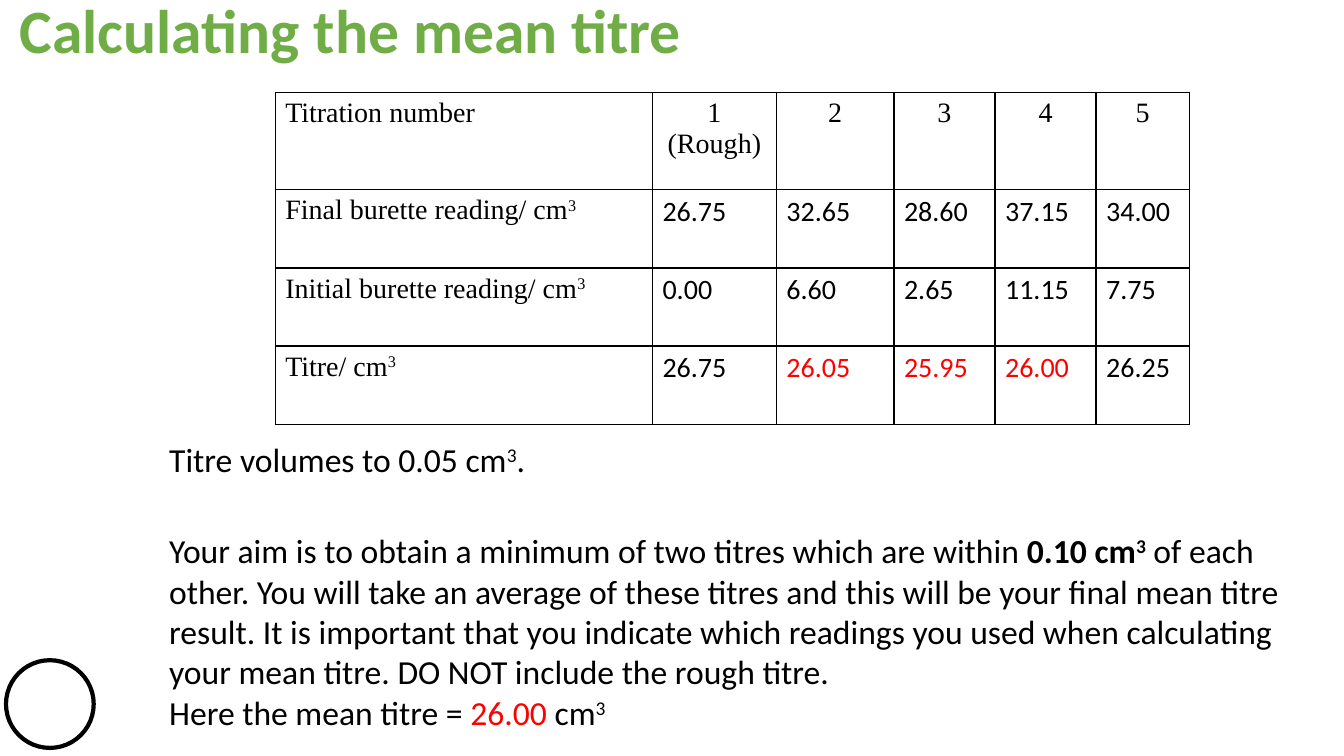
from dataclasses import dataclass
from typing import Any

from lxml.etree import SubElement
from pptx import Presentation
from pptx.dml.color import RGBColor
from pptx.enum.shapes import MSO_SHAPE
from pptx.enum.text import MSO_ANCHOR, PP_ALIGN
from pptx.oxml.ns import qn
from pptx.util import Pt


@dataclass(frozen=True)
class Theme:
    black: RGBColor = RGBColor(0x00, 0x00, 0x00)
    white: RGBColor = RGBColor(0xFF, 0xFF, 0xFF)
    red: RGBColor = RGBColor(0xFF, 0x00, 0x00)
    green: RGBColor = RGBColor(0x70, 0xAD, 0x47)
    sans: str = "Calibri"
    serif: str = "Times New Roman"
    title: float = 44
    body: float = 24
    table: float = 20


THEME = Theme()


@dataclass(frozen=True)
class Span:
    text: str
    color: RGBColor = THEME.black
    bold: bool = False
    raised: bool = False


@dataclass(frozen=True)
class TextBlock:
    box: tuple[float, float, float, float]
    paragraphs: list[list[Span]]
    size: float = THEME.body
    anchor: MSO_ANCHOR = MSO_ANCHOR.TOP
    spacing: float = 1.0


CUBED = Span("3", raised=True)

# Text blocks, from back to front
TEXT_BLOCKS = [
    TextBlock((113.76, 374.4, 819.36, 152.64), [
        [Span("Your aim is to obtain a minimum of two titres which are within "),
         Span("0.10 cm", bold=True), Span("3", bold=True, raised=True),
         Span(" of each other. You will take an average of these titres and this "
              "will be your final mean titre result. It is important that you "
              "indicate which readings you used when calculating your mean titre. "
              "DO NOT include the rough titre.")],
        [Span("Here the mean titre = "), Span("26.00", THEME.red), Span(" cm"), CUBED],
    ], anchor=MSO_ANCHOR.MIDDLE),
    TextBlock((113.76, 315.36, 646.56, 74.16),
              [[Span("Titre volumes to 0.05 cm"), CUBED, Span(".")]], spacing=0.8),
    TextBlock((7.2, -9.36, 648, 90),
              [[Span("Calculating the mean titre", THEME.green, bold=True)]],
              size=THEME.title),
]

# Titration table
TABLE_BOX = (196.56, 66.24, 653.04, 236.88)
COLUMN_WIDTHS = [269.5, 88.5, 84, 72.2, 72.2, 66.6]
ROW_HEIGHTS = [69.4, 55.8, 55.8, 55.8]
HEADINGS = ["Titration number", "1\n(Rough)", "2", "3", "4", "5"]
READINGS = {
    "Final burette reading/ cm": ["26.75", "32.65", "28.60", "37.15", "34.00"],
    "Initial burette reading/ cm": ["0.00", "6.60", "2.65", "11.15", "7.75"],
    "Titre/ cm": ["26.75", "26.05", "25.95", "26.00", "26.25"],
}
CONCORDANT = {"26.05", "25.95", "26.00"}


def write(frame: Any, paragraphs: list[list[Span]], size: float, face: str,
          align: PP_ALIGN = PP_ALIGN.LEFT, spacing: float = 1.0) -> None:
    for index, spans in enumerate(paragraphs):
        paragraph = frame.add_paragraph() if index else frame.paragraphs[0]
        paragraph.alignment = align
        paragraph.line_spacing = spacing
        for span in spans:
            run = paragraph.add_run()
            run.text = span.text
            font_values = {"size": Pt(size), "name": face, "bold": span.bold}
            for name, value in font_values.items():
                setattr(run.font, name, value)
            run.font.color.rgb = span.color
            if span.raised:
                run.font._element.set("baseline", "30000")


def add_text(slide: Any, block: TextBlock) -> None:
    frame = slide.shapes.add_textbox(*map(Pt, block.box)).text_frame
    frame_values = {"word_wrap": True, "vertical_anchor": block.anchor}
    for name, value in frame_values.items():
        setattr(frame, name, value)
    write(frame, block.paragraphs, block.size, THEME.sans, spacing=block.spacing)


def outline(cell: Any) -> None:
    properties = cell._tc.get_or_add_tcPr()
    for side in ("lnL", "lnR", "lnT", "lnB"):
        edge = SubElement(properties, qn(f"a:{side}"), w=str(Pt(1)))
        fill = SubElement(edge, qn("a:solidFill"))
        SubElement(fill, qn("a:srgbClr"), val=str(THEME.black))


def add_titrations(slide: Any) -> None:
    shape = slide.shapes.add_table(len(ROW_HEIGHTS), len(COLUMN_WIDTHS),
                                   *map(Pt, TABLE_BOX))
    titrations = shape.table
    for flag in ("first_row", "horz_banding"):
        setattr(titrations, flag, False)
    for column, width in zip(titrations.columns, COLUMN_WIDTHS):
        column.width = Pt(width)
    for row, height in zip(titrations.rows, ROW_HEIGHTS):
        row.height = Pt(height)
    for cell in titrations.iter_cells():
        outline(cell)
        cell.fill.background()

    for column, heading in enumerate(HEADINGS):
        lines = [[Span(line)] for line in heading.split("\n")]
        write(titrations.cell(0, column).text_frame, lines, THEME.table, THEME.serif,
              PP_ALIGN.CENTER if column else PP_ALIGN.LEFT)
    for row, (label, values) in enumerate(READINGS.items(), start=1):
        write(titrations.cell(row, 0).text_frame, [[Span(label), CUBED]],
              THEME.table, THEME.serif)
        for column, value in enumerate(values, start=1):
            color = THEME.red if value in CONCORDANT else THEME.black
            write(titrations.cell(row, column).text_frame, [[Span(value, color)]],
                  THEME.table, THEME.sans)


def add_circle(slide: Any) -> None:
    circle = slide.shapes.add_shape(MSO_SHAPE.OVAL, *map(Pt, (4.32, 471.6, 62.64, 62.64)))
    circle.shadow.inherit = False
    circle.fill.solid()
    circle.fill.fore_color.rgb = THEME.white
    circle.line.color.rgb = THEME.black
    circle.line.width = Pt(3)


def main() -> None:
    deck = Presentation()
    deck.slide_width, deck.slide_height = Pt(960), Pt(540)
    slide = deck.slides.add_slide(deck.slide_layouts[6])
    add_circle(slide)
    add_titrations(slide)
    for block in TEXT_BLOCKS:
        add_text(slide, block)
    deck.save("out.pptx")


if __name__ == "__main__":
    main()
